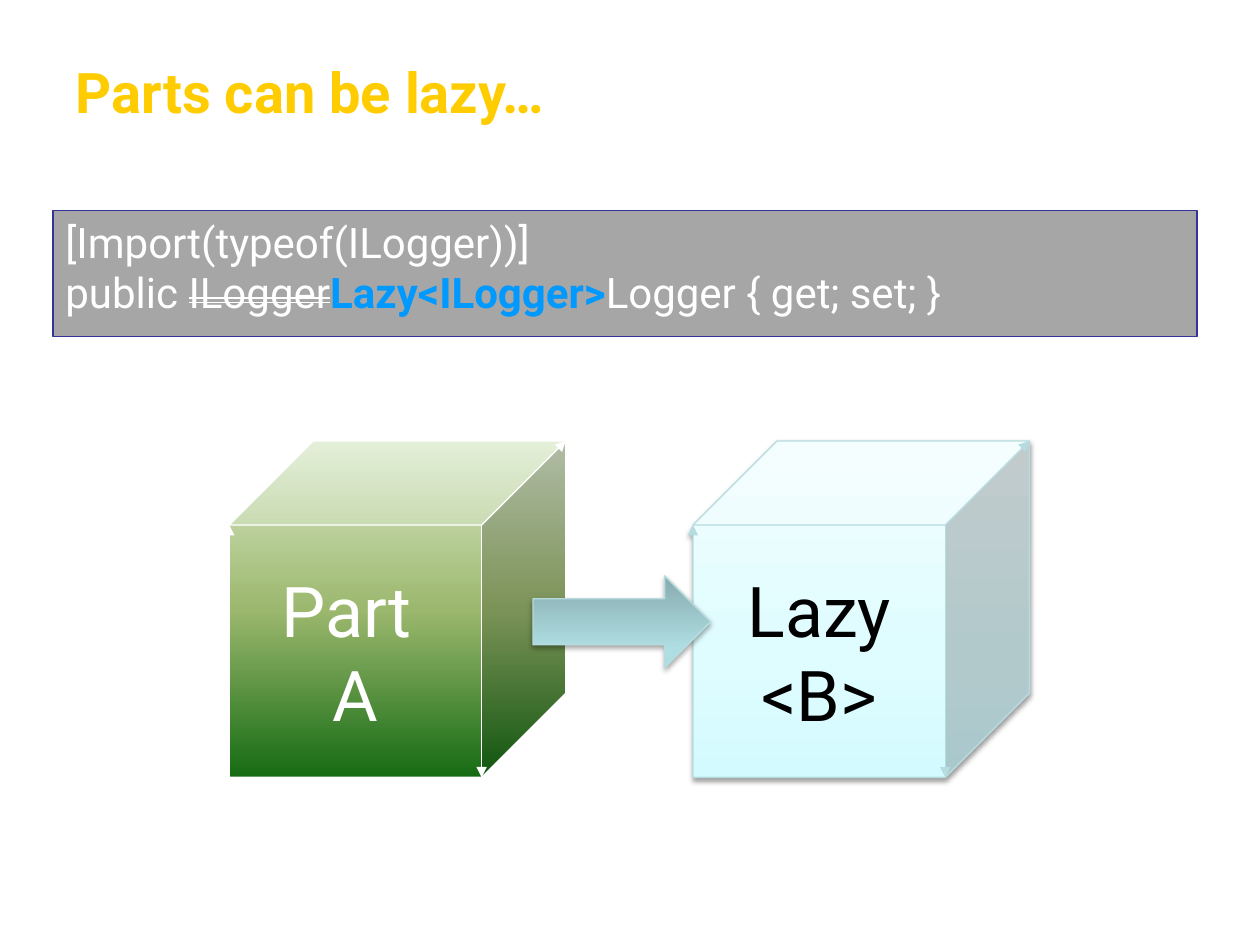
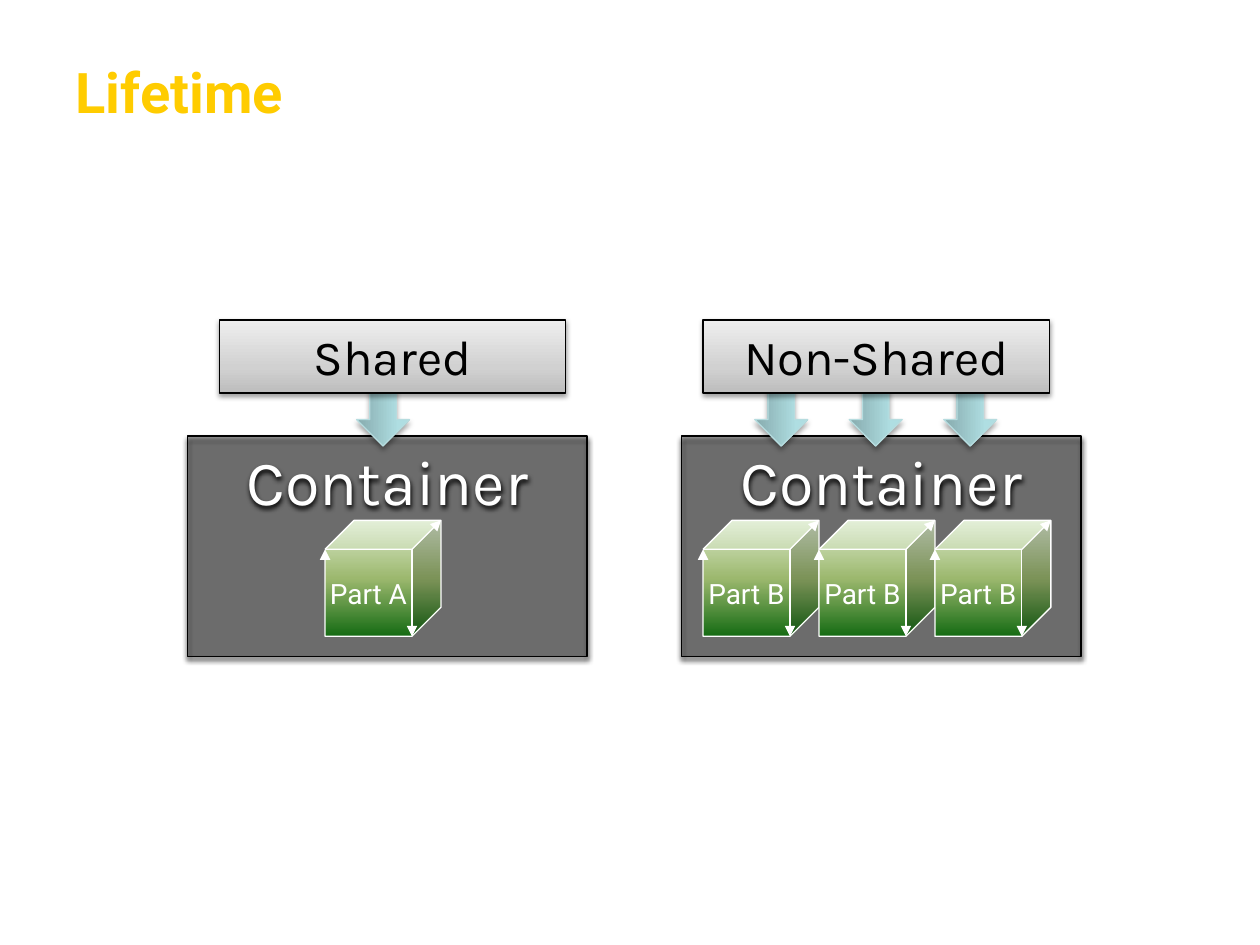
from lxml import etree
from pptx import Presentation
from pptx.dml.color import RGBColor
from pptx.enum.shapes import MSO_SHAPE as Shape
from pptx.enum.text import MSO_ANCHOR as Anchor, MSO_AUTO_SIZE as Auto, PP_ALIGN as Align
from pptx.oxml import parse_xml
from pptx.oxml.ns import qn
from pptx.util import Inches, Pt

HEX = {
    "gold": "FFCC00", "white": "FFFFFF", "black": "000000",
    "navy": "333399", "blue": "0099FF", "teal": "B6DCDF",
}
# Gradient stops, position in percent and colour
GREEN = [(0, "DDEBCF"), (50, "9CB86E"), (100, "156B13")]
ICE = [(0, "D3FBFF"), (35, "DFFCFF"), (100, "F2FEFF")]
SEA = [(0, "87ABAE"), (80, "AFDEE2"), (100, "AFE0E4")]
GREY = [(0, "BDBDBD"), (35, "D1D1D1"), (100, "EEEEEE")]
# Shadows: opacity in percent, blur and distance in points
SOFT, DEEP = (38, 3.1, 1.6), (35, 3.1, 1.8)
NS = "http://schemas.openxmlformats.org/drawingml/2006/main"


def rgb(name):
    return RGBColor.from_string(HEX[name])


def apply(item, values):
    for key, value in values.items():
        setattr(item, key, value)


def style(run, size, color, face="Roboto", bold=False):
    apply(run.font, {"name": face, "size": Pt(size), "bold": bold})
    run.font.color.rgb = rgb(color)


def cast(effects, alpha, blur, dist):
    """Put a downward black shadow in an effect list."""
    effects.append(parse_xml(
        f'<a:outerShdw xmlns:a="{NS}" blurRad="{Pt(blur)}" dist="{Pt(dist)}" '
        f'dir="5400000" algn="t" rotWithShape="0"><a:srgbClr val="{HEX["black"]}">'
        f'<a:alpha val="{alpha * 1000}"/></a:srgbClr></a:outerShdw>'))


def blend(shape, stops, angle):
    marks = "".join(f'<a:gs pos="{pos * 1000}"><a:srgbClr val="{tone}"/></a:gs>'
                    for pos, tone in stops)
    shape.fill.background()
    props = shape._element.spPr
    props.replace(props.find(qn("a:noFill")), parse_xml(
        f'<a:gradFill xmlns:a="{NS}" rotWithShape="1"><a:gsLst>{marks}</a:gsLst>'
        f'<a:lin ang="{angle * 60000}" scaled="0"/></a:gradFill>'))


def veil(shape):
    """Fill with translucent black."""
    shape.fill.solid()
    shape.fill.fore_color.rgb = rgb("black")
    tone = shape._element.spPr.find(qn("a:solidFill"))[0]
    etree.SubElement(tone, qn("a:alpha")).set("val", "35000")


def block(slide, kind, box, edge, shade=None):
    shape = slide.shapes.add_shape(kind, *map(Inches, box))
    shape.line.color.rgb = rgb(edge)
    shape.line.width = Pt(0.75)
    shape.shadow.inherit = False
    if shade:
        cast(shape._element.spPr.find(qn("a:effectLst")), *shade)
    return shape


def write(shape, lines, size, color, face="Roboto", anchor=Anchor.TOP):
    frame = shape.text_frame
    apply(frame, {"word_wrap": False, "vertical_anchor": anchor})
    for i, line in enumerate(lines):
        para = frame.add_paragraph() if i else frame.paragraphs[0]
        para.alignment = Align.CENTER
        run = para.add_run()
        run.text = line
        style(run, size, color, face)


def cube(slide, box, lines, size, stops=GREEN, angle=90, edge="white",
         ink="white", shade=None):
    shape = block(slide, Shape.CUBE, box, edge, shade)
    blend(shape, stops, angle)
    tip = etree.SubElement(shape.line._ln, qn("a:tailEnd"))
    tip.set("type", "triangle")
    write(shape, lines, size, ink, anchor=Anchor.MIDDLE)


def arrow(slide, kind, box, angle):
    blend(block(slide, kind, box, "teal", DEEP), SEA, angle)


def start(deck, text):
    """Add a slide with the shared title style."""
    slide = deck.slides.add_slide(deck.slide_layouts[5])
    title = slide.shapes.title
    apply(title, {"left": Inches(0.5), "top": Inches(0.1),
                  "width": Inches(9), "height": Inches(1.25)})
    apply(title.text_frame, {"auto_size": Auto.NONE, "word_wrap": True,
                             "vertical_anchor": Anchor.MIDDLE})
    para = title.text_frame.paragraphs[0]
    para.alignment = Align.LEFT
    run = para.add_run()
    run.text = text
    style(run, 32, "gold", bold=True)
    effects = etree.Element(qn("a:effectLst"))
    run.font._element.find(qn("a:latin")).addprevious(effects)
    cast(effects, 100, 0, 1.5)
    return slide


def code(slide, box):
    shape = block(slide, Shape.RECTANGLE, box, "navy")
    veil(shape)
    frame = shape.text_frame
    apply(frame, {"word_wrap": True, "vertical_anchor": Anchor.TOP})
    lines = [["[Import(typeof(ILogger))]"],
             ["public ", "ILogger", "Lazy<ILogger>", "Logger { get; set; }"]]
    for i, parts in enumerate(lines):
        para = frame.add_paragraph() if i else frame.paragraphs[0]
        para.alignment = Align.LEFT
        for part in parts:
            run = para.add_run()
            run.text = part
            new = part.startswith("Lazy")
            style(run, 24, "blue" if new else "white", bold=new)
            if part == "ILogger":
                run.font._element.set("strike", "dblStrike")


def scope(slide, box, name, part, count, inset, first, mid):
    """Draw a container, its parts, and the label with arrows above it."""
    left, top, width, height = box
    # Container and parts
    shape = block(slide, Shape.RECTANGLE, box, "black", DEEP)
    veil(shape)
    write(shape, ["Container"], 36, "white", "Karla")
    for i in range(count):
        cube(slide, (left + first + 0.92 * i, top + 0.67, 0.92, 0.92), [part], 16)
    # Arrows
    for i in range(count):
        spot = left + mid + 0.75 * i - 0.21
        arrow(slide, Shape.DOWN_ARROW, (spot, top - 0.67, 0.42, 0.75), 0)
    # Label
    label = block(slide, Shape.RECTANGLE,
                  (left + inset, top - 0.92, 2.75, 0.58), "black", SOFT)
    blend(label, GREY, 270)
    write(label, [name], 28, "black", "Karla")


def lazy(deck):
    slide = start(deck, "Parts can be lazy…")
    cube(slide, (1.82, 3.5, 2.67, 2.67), ["Part ", "A"], 40)
    cube(slide, (5.5, 3.5, 2.67, 2.67), ["Lazy", "<B>"], 40,
         ICE, 270, "teal", "black", SOFT)
    code(slide, (0.42, 1.67, 9.08, 1))
    arrow(slide, Shape.RIGHT_ARROW, (4.23, 4.57, 1.41, 0.73), 90)


def life(deck):
    slide = start(deck, "Lifetime")
    scope(slide, (5.41, 3.46, 3.17, 1.75), "Non-Shared", "Part B", 3, 0.17, 0.17, 0.79)
    scope(slide, (1.49, 3.46, 3.17, 1.75), "Shared", "Part A", 1, 0.25, 1.09, 1.55)


def main():
    deck = Presentation()
    apply(deck, {"slide_width": Inches(10), "slide_height": Inches(7.5)})
    lazy(deck)
    life(deck)
    deck.save("out.pptx")


if __name__ == "__main__":
    main()
